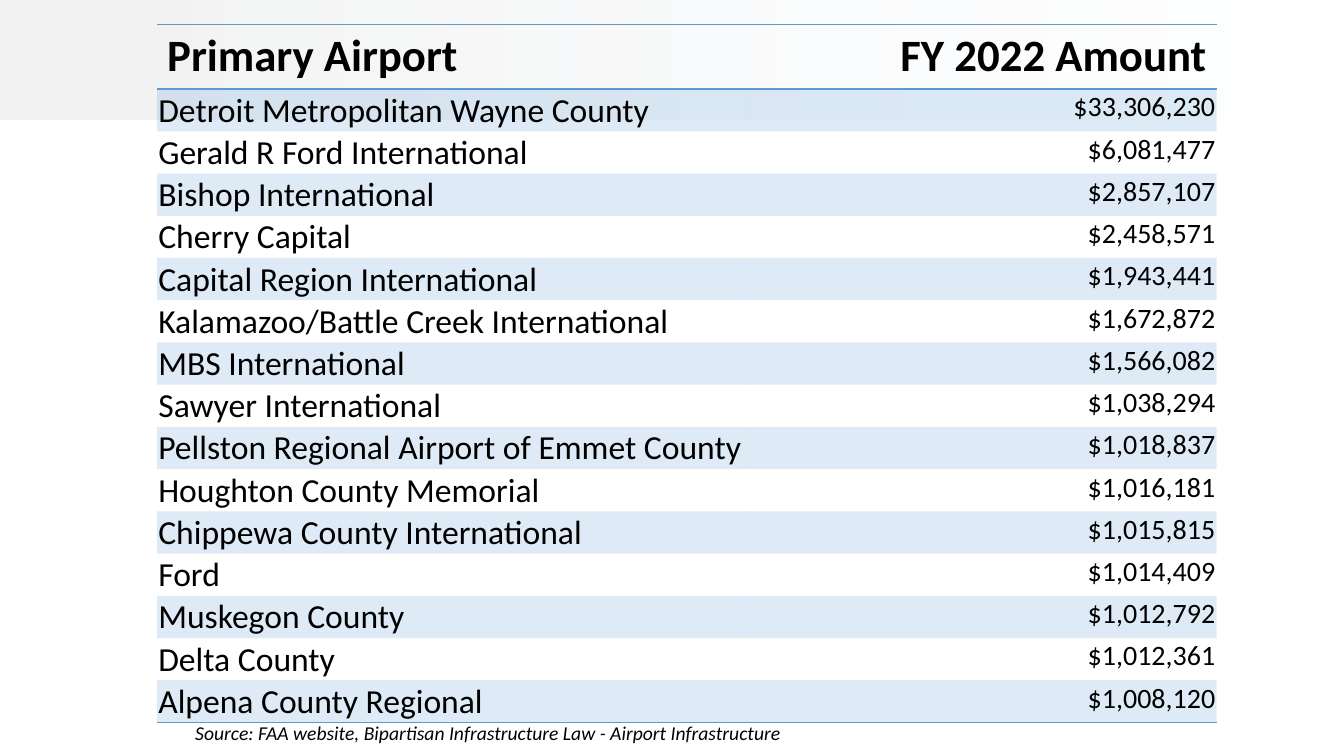
from dataclasses import dataclass

from lxml import etree
from pptx import Presentation
from pptx.dml.color import RGBColor
from pptx.enum.text import MSO_ANCHOR, PP_ALIGN
from pptx.oxml.ns import qn
from pptx.util import Cm, Pt

LEFT, RIGHT, TOP = PP_ALIGN.LEFT, PP_ALIGN.RIGHT, MSO_ANCHOR.TOP
PLAIN = "{2D5ABB26-0587-4C30-8999-92F81FD0307C}"  # table style without grid


@dataclass(frozen=True)
class Theme:
    font: str = "Calibri"
    ink: str = "000000"
    blue: str = "5B9BD5"
    grey: str = "F2F2F2"
    pale: str = "F7FAFD"
    head: int = 32
    name: int = 24
    sum: int = 20
    note: int = 14


THEME = Theme()

HEADS = ("Primary Airport", "FY 2022 Amount")
ROWS = (
    ("Detroit Metropolitan Wayne County", "$33,306,230"),
    ("Gerald R Ford International", "$6,081,477"),
    ("Bishop International", "$2,857,107"),
    ("Cherry Capital", "$2,458,571"),
    ("Capital Region International", "$1,943,441"),
    ("Kalamazoo/Battle Creek International", "$1,672,872"),
    ("MBS International", "$1,566,082"),
    ("Sawyer International", "$1,038,294"),
    ("Pellston Regional Airport of Emmet County", "$1,018,837"),
    ("Houghton County Memorial", "$1,016,181"),
    ("Chippewa County International", "$1,015,815"),
    ("Ford", "$1,014,409"),
    ("Muskegon County", "$1,012,792"),
    ("Delta County", "$1,012,361"),
    ("Alpena County Regional", "$1,008,120"),
)
SOURCE = "Source: FAA website, Bipartisan Infrastructure Law - Airport Infrastructure"


def apply(obj, form):
    for key, val in form.items():
        setattr(obj, key, val)


def write(frame, text, size, align=LEFT, **form):
    para = frame.paragraphs[0]
    para.alignment = align
    run = para.add_run()
    run.text = text
    apply(run.font, {"name": THEME.font, "size": Pt(size), **form})
    run.font.color.rgb = RGBColor.from_string(THEME.ink)


def fade(color, share):
    etree.SubElement(color, qn("a:alpha"), val=str(share * 1000))


def rule(cell, *sides):
    """Draw blue cell borders; sides are given in schema order."""
    props = cell._tc.get_or_add_tcPr()
    for spot, side in enumerate(sides):
        line = etree.Element(qn(f"a:ln{side}"), w=str(Pt(1)))
        fill = etree.SubElement(line, qn("a:solidFill"))
        etree.SubElement(fill, qn("a:srgbClr"), val=THEME.blue)
        props.insert(spot, line)


def tint(cell):
    cell.fill.solid()
    cell.fill.fore_color.rgb = RGBColor.from_string(THEME.blue)
    fade(next(cell._tc.tcPr.iter(qn("a:srgbClr"))), 20)


def add_band(slide):
    build = slide.shapes.build_freeform(33.12, 0.05, scale=Cm(1))
    build.add_line_segments([(15.7, 0), (0, 0), (0, 3.35), (33.5, 3.02)])
    band = build.convert_to_shape()
    band.shadow.inherit = False
    band.line.fill.background()
    band.fill.gradient()
    band.fill.gradient_angle = 0
    for stop, color in zip(band.fill.gradient_stops, (THEME.grey, THEME.pale)):
        stop.color.rgb = RGBColor.from_string(color)
    fade(list(band._element.spPr.iter(qn("a:srgbClr")))[-1], 4)


def add_grid(slide):
    head, body = Cm(1.61), Cm(15.64)
    shape = slide.shapes.add_table(len(ROWS) + 1, len(HEADS), Cm(3.96), Cm(0.61),
                                   Cm(26.7), head + body)
    table = shape.table
    apply(table, {"first_row": False, "horz_banding": False})
    table._tbl.tblPr.find(qn("a:tableStyleId")).text = PLAIN
    for col, width in zip(table.columns, (14.86, 11.84)):
        col.width = Cm(width)
    for row in table.rows:
        row.height = body // len(ROWS)
    table.rows[0].height = head

    # Header
    for col, (text, align) in enumerate(zip(HEADS, (LEFT, RIGHT))):
        cell = table.cell(0, col)
        cell.fill.background()
        write(cell.text_frame, text, THEME.head, align, bold=True)
        rule(cell, "T", "B")

    # Airports, every other row tinted
    looks = ((THEME.name, LEFT), (THEME.sum, RIGHT))
    edge = Cm(0.03)
    for num, row in enumerate(ROWS, 1):
        for col, (text, look) in enumerate(zip(row, looks)):
            cell = table.cell(num, col)
            apply(cell, {"margin_left": edge, "margin_right": edge, "margin_top": edge,
                         "margin_bottom": 0, "vertical_anchor": TOP})
            write(cell.text_frame, text, *look)
            if num % 2:
                tint(cell)
            else:
                cell.fill.background()
            if num == len(ROWS):
                rule(cell, "B")


def add_note(slide):
    box = slide.shapes.add_textbox(Cm(4.67), Cm(18.03), Cm(15.54), Cm(0.86))
    box.text_frame.word_wrap = False
    write(box.text_frame, SOURCE, THEME.note, italic=True)


def main():
    deck = Presentation()
    apply(deck, {"slide_width": Cm(33.87), "slide_height": Cm(19.05)})
    slide = deck.slides.add_slide(deck.slide_layouts[6])
    add_band(slide)
    add_grid(slide)
    add_note(slide)
    deck.save("out.pptx")


if __name__ == "__main__":
    main()
